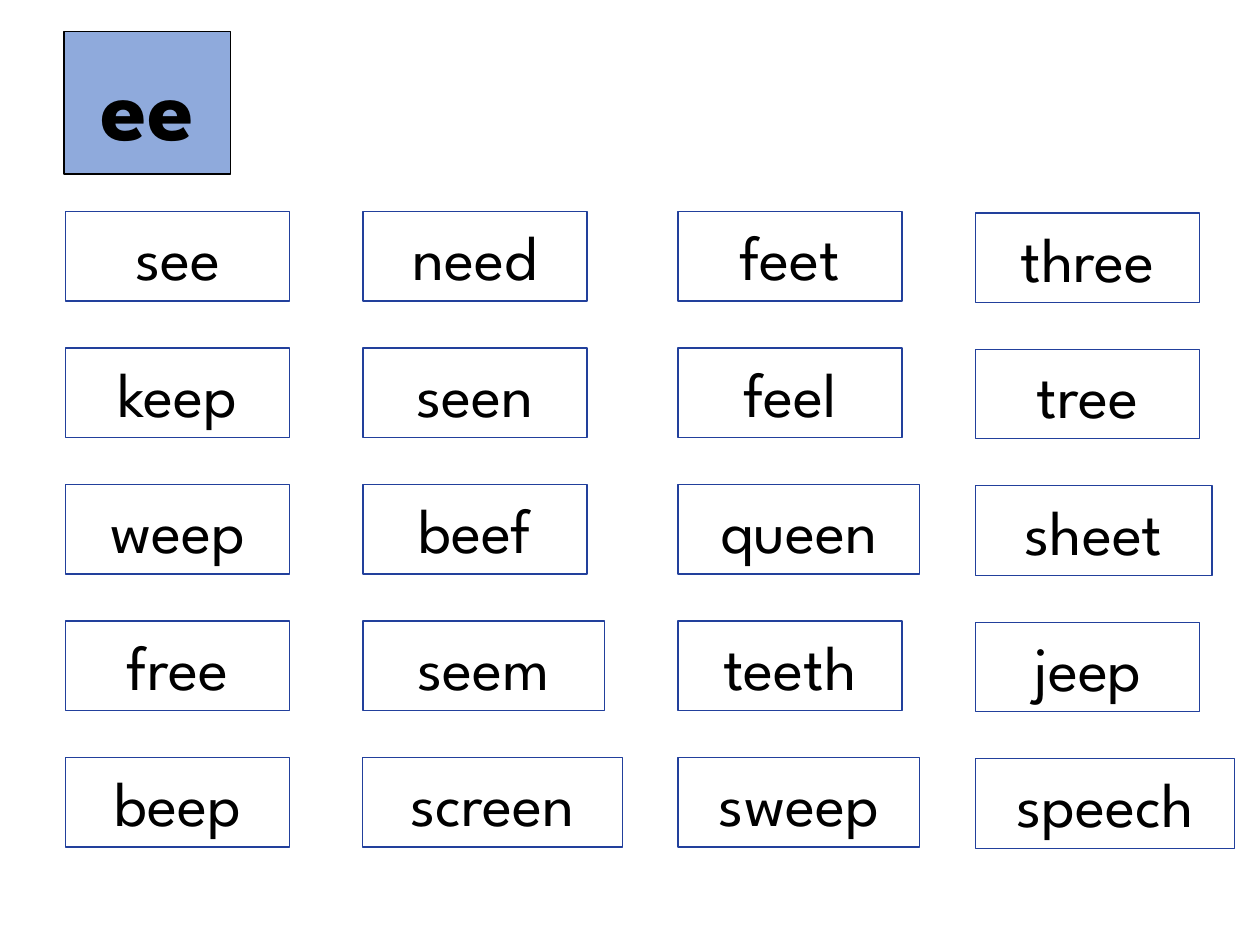
import dataclasses

import pptx
import pptx.util
import pptx.dml.color
import pptx.enum.shapes
import pptx.enum.text

Inches = pptx.util.Inches
RGB = pptx.dml.color.RGBColor.from_string
Anchor = pptx.enum.text.MSO_ANCHOR
Fit = pptx.enum.text.MSO_AUTO_SIZE


@dataclasses.dataclass
class Theme:
    font: str = "League Spartan"
    ink: str = "000000"
    edge: str = "22409C"
    tile: str = "8FAADC"
    word: int = 36
    sound: int = 54


def write(shape, text, font, size, color, bold=False, anchor=Anchor.TOP, fit=Fit.NONE):
    frame = shape.text_frame
    frame.word_wrap = True
    frame.auto_size = fit
    frame.vertical_anchor = anchor
    para = frame.paragraphs[0]
    para.alignment = pptx.enum.text.PP_ALIGN.CENTER
    run = para.add_run()
    run.text = text
    run.font.name = font
    run.font.size = pptx.util.Pt(size)
    run.font.bold = bold
    run.font.color.rgb = RGB(color)


class Board:
    """Holds the theme and the slide being filled."""

    def __init__(self, slide, theme):
        self.slide = slide
        self.theme = theme

    def outline(self, shape, color, width):
        shape.line.color.rgb = RGB(color)
        shape.line.width = pptx.util.Pt(width)

    def tile(self, text, left, top, width, height):
        theme = self.theme
        shape = self.slide.shapes.add_shape(
            pptx.enum.shapes.MSO_SHAPE.RECTANGLE,
            Inches(left), Inches(top), Inches(width), Inches(height))
        shape.shadow.inherit = False
        shape.fill.solid()
        shape.fill.fore_color.rgb = RGB(theme.tile)
        self.outline(shape, theme.ink, 1)
        write(shape, text, font=theme.font, size=theme.sound, color=theme.ink,
              bold=True, anchor=Anchor.MIDDLE)

    def card(self, text, left, top, width, height):
        theme = self.theme
        box = self.slide.shapes.add_textbox(
            Inches(left), Inches(top), Inches(width), Inches(height))
        self.outline(box, theme.edge, 0.75)
        write(box, text, font=theme.font, size=theme.word, color=theme.ink,
              fit=Fit.SHAPE_TO_FIT_TEXT)


# Each column: left, top, words
COLUMNS = [
    (0.52, 1.68, ["see", "keep", "weep", "free", "beep"]),
    (2.88, 1.68, ["need", "seen", "beef", "seem", "screen"]),
    (5.38, 1.68, ["feet", "feel", "queen", "teeth", "sweep"]),
    (7.74, 1.69, ["three", "tree", "sheet", "jeep", "speech"]),
]
STEP = 1.083
WIDTH, HEIGHT = 1.78, 0.71
WIDE = {"seem": 1.92, "queen": 1.92, "sweep": 1.92, "sheet": 1.88,
        "screen": 2.06, "speech": 2.06}


def main():
    deck = pptx.Presentation()
    deck.slide_width, deck.slide_height = Inches(10), Inches(7.5)
    board = Board(deck.slides.add_slide(deck.slide_layouts[6]), Theme())
    for left, top, words in COLUMNS:
        for row, word in enumerate(words):
            board.card(word, left, top + row * STEP, WIDE.get(word, WIDTH), HEIGHT)
    board.tile("ee", 0.51, 0.25, 1.32, 1.13)
    deck.save("out.pptx")


if __name__ == "__main__":
    main()
